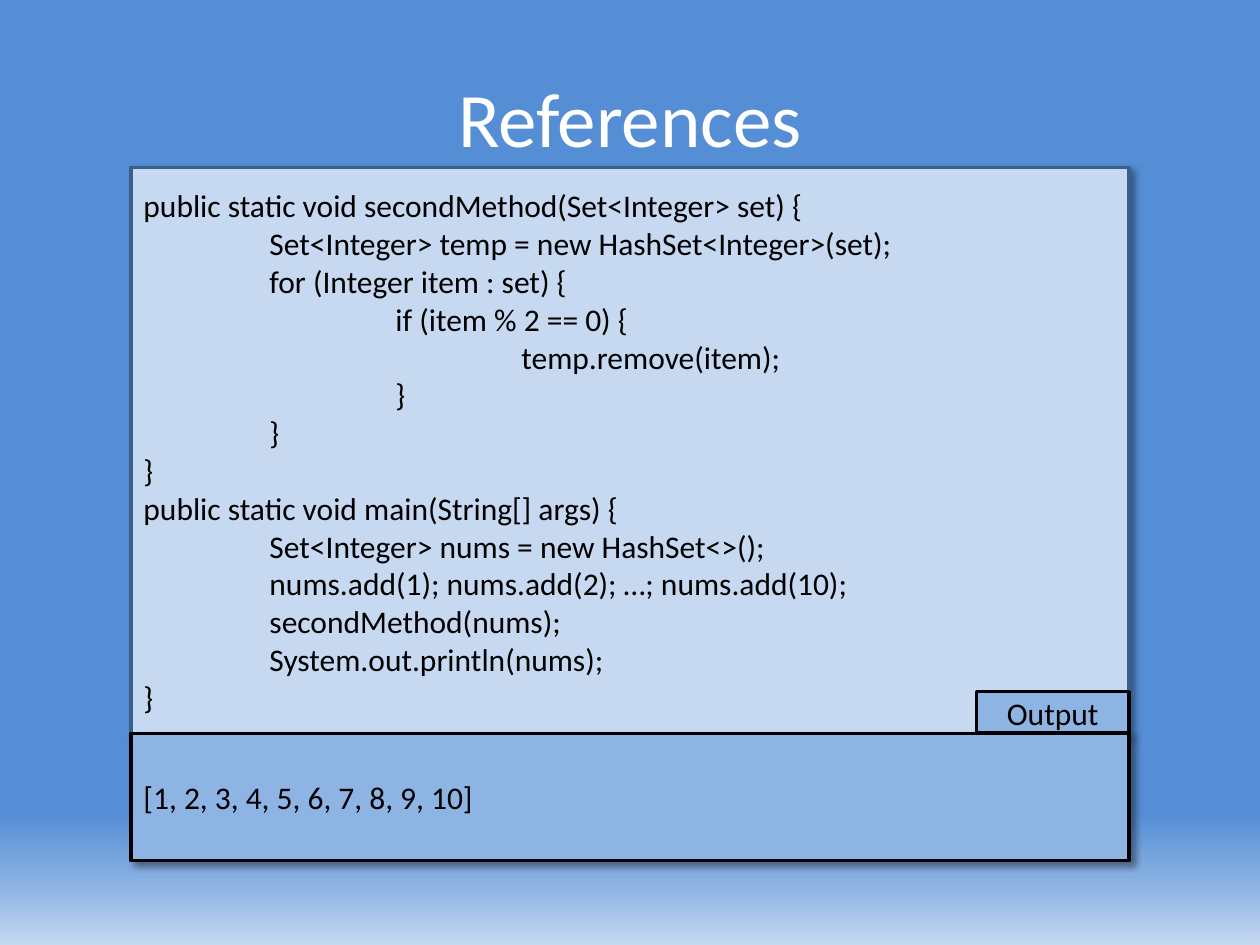
from copy import deepcopy
from dataclasses import dataclass

from lxml import etree
from pptx import Presentation
from pptx import util as u
from pptx.dml.color import RGBColor
from pptx.enum import shapes, text
from pptx.oxml import ns


@dataclass(frozen=True)
class Theme:
    font: str = "Calibri"
    title_size: int = 44
    code_size: int = 18
    border: int = 2
    white: str = "FFFFFF"
    black: str = "000000"
    pale: str = "C6D9F1"
    sky: str = "8EB4E3"
    blue: str = "558ED5"
    edge: str = "3A5F8C"


# The slide is a grid of square cells, one inch each.
COLUMNS, ROWS = 10, 7.5
LEFT, PANEL_WIDTH = 1.04, 7.92
CODE_TOP, CODE_HEIGHT = 1.33, 4.5
OUTPUT_TOP, OUTPUT_HEIGHT = 5.82, 1.01
TAB_WIDTH, TAB_HEIGHT = 1.21, 0.33
INDENT_LEVELS = 3

METHOD = """public static void secondMethod(Set<Integer> set) {
\tSet<Integer> temp = new HashSet<Integer>(set);
\tfor (Integer item : set) {
\t\tif (item % 2 == 0) {
\t\t\ttemp.remove(item);
\t\t}
\t}
}"""
MAIN = """public static void main(String[] args) {
\tSet<Integer> nums = new HashSet<>();
\tnums.add(1); nums.add(2); …; nums.add(10);
\tsecondMethod(nums);
\tSystem.out.println(nums);
}"""


def write(frame, content, *, font, size, color, align=text.PP_ALIGN.LEFT):
    """Fill a text frame, one paragraph per line of content."""
    frame.word_wrap = True
    frame.vertical_anchor = text.MSO_ANCHOR.MIDDLE
    frame.text = content
    for paragraph in frame.paragraphs:
        paragraph.alignment = align
        if "\t" in paragraph.text:
            set_indents(paragraph)
        for run in paragraph.runs:
            run.font.name = font
            run.font.size = u.Pt(size)
            run.font.color.rgb = RGBColor.from_string(color)


def set_indents(paragraph):
    """Put a tab stop at every column a code line may start from."""
    properties = paragraph._p.get_or_add_pPr()
    stops = etree.SubElement(properties, ns.qn("a:tabLst"))
    for level in range(1, INDENT_LEVELS + 1):
        etree.SubElement(stops, ns.qn("a:tab"), pos=str(u.Inches(level)), algn="l")


def cast_shadow(shape, blur=4, distance=3, angle=45, opacity=40):
    """Add an outer shadow; blur and distance are in points."""
    effects = shape.element.spPr.find(ns.qn("a:effectLst"))
    shadow = etree.SubElement(
        effects, ns.qn("a:outerShdw"), blurRad=str(u.Pt(blur)),
        dist=str(u.Pt(distance)), dir=str(angle * 60000),
        algn="tl", rotWithShape="0")
    color = etree.SubElement(shadow, ns.qn("a:srgbClr"), val=Theme.black)
    etree.SubElement(color, ns.qn("a:alpha"), val=str(opacity * 1000))


class CodeSlide:
    def __init__(self, deck, theme):
        self.theme = theme
        self.deck = deck
        self.slide = deck.slides.add_slide(deck.slide_layouts[5])

    def place(self, left, top, width, height):
        """Turn grid columns and rows into lengths."""
        column = self.deck.slide_width / COLUMNS
        row = self.deck.slide_height / ROWS
        return (round(left * column), round(top * row),
                round(width * column), round(height * row))

    def background(self, stops):
        fill = self.slide.background.fill
        fill.gradient()
        fill.gradient_angle = 270
        first = self.slide.element.find(".//" + ns.qn("a:gs"))
        first.addnext(deepcopy(first))
        for stop, (position, color) in zip(fill.gradient_stops, stops):
            stop.position = position
            stop.color.rgb = RGBColor.from_string(color)

    def title(self, content, box):
        heading = self.slide.shapes.title
        heading.left, heading.top, heading.width, heading.height = self.place(*box)
        write(heading.text_frame, content, font=self.theme.font,
              size=self.theme.title_size, color=self.theme.white,
              align=text.PP_ALIGN.CENTER)

    def panel(self, content, box, fill, line, *, group=None, shadow=True,
              align=text.PP_ALIGN.LEFT):
        parent = (group or self.slide).shapes
        panel = parent.add_shape(shapes.MSO_SHAPE.RECTANGLE, *self.place(*box))
        panel.shadow.inherit = False
        panel.fill.solid()
        panel.fill.fore_color.rgb = RGBColor.from_string(fill)
        panel.line.color.rgb = RGBColor.from_string(line)
        panel.line.width = u.Pt(self.theme.border)
        if shadow:
            cast_shadow(panel)
        write(panel.text_frame, content, font=self.theme.font,
              size=self.theme.code_size, color=self.theme.black, align=align)

    def output(self, result, box):
        """Result panel with a label tab on its top right corner."""
        left, top, width, _ = box
        tab = (left + width - TAB_WIDTH, top - TAB_HEIGHT, TAB_WIDTH, TAB_HEIGHT)
        group = self.slide.shapes.add_group_shape()
        colors = self.theme.sky, self.theme.black
        self.panel(result, box, *colors, group=group)
        self.panel("Output", tab, *colors, group=group, shadow=False,
                   align=text.PP_ALIGN.CENTER)


def main():
    deck = Presentation()
    deck.slide_width, deck.slide_height = u.Inches(COLUMNS), u.Inches(ROWS)
    theme = Theme()
    page = CodeSlide(deck, theme)
    page.background([(0.86, theme.blue), (0.94, theme.sky), (1, theme.pale)])
    page.title("References", (0.5, 0.3, 9, 1.25))
    page.panel(f"{METHOD}\n{MAIN}", (LEFT, CODE_TOP, PANEL_WIDTH, CODE_HEIGHT),
               theme.pale, theme.edge)
    page.output("[1, 2, 3, 4, 5, 6, 7, 8, 9, 10]",
                (LEFT, OUTPUT_TOP, PANEL_WIDTH, OUTPUT_HEIGHT))
    deck.save("out.pptx")


if __name__ == "__main__":
    main()
